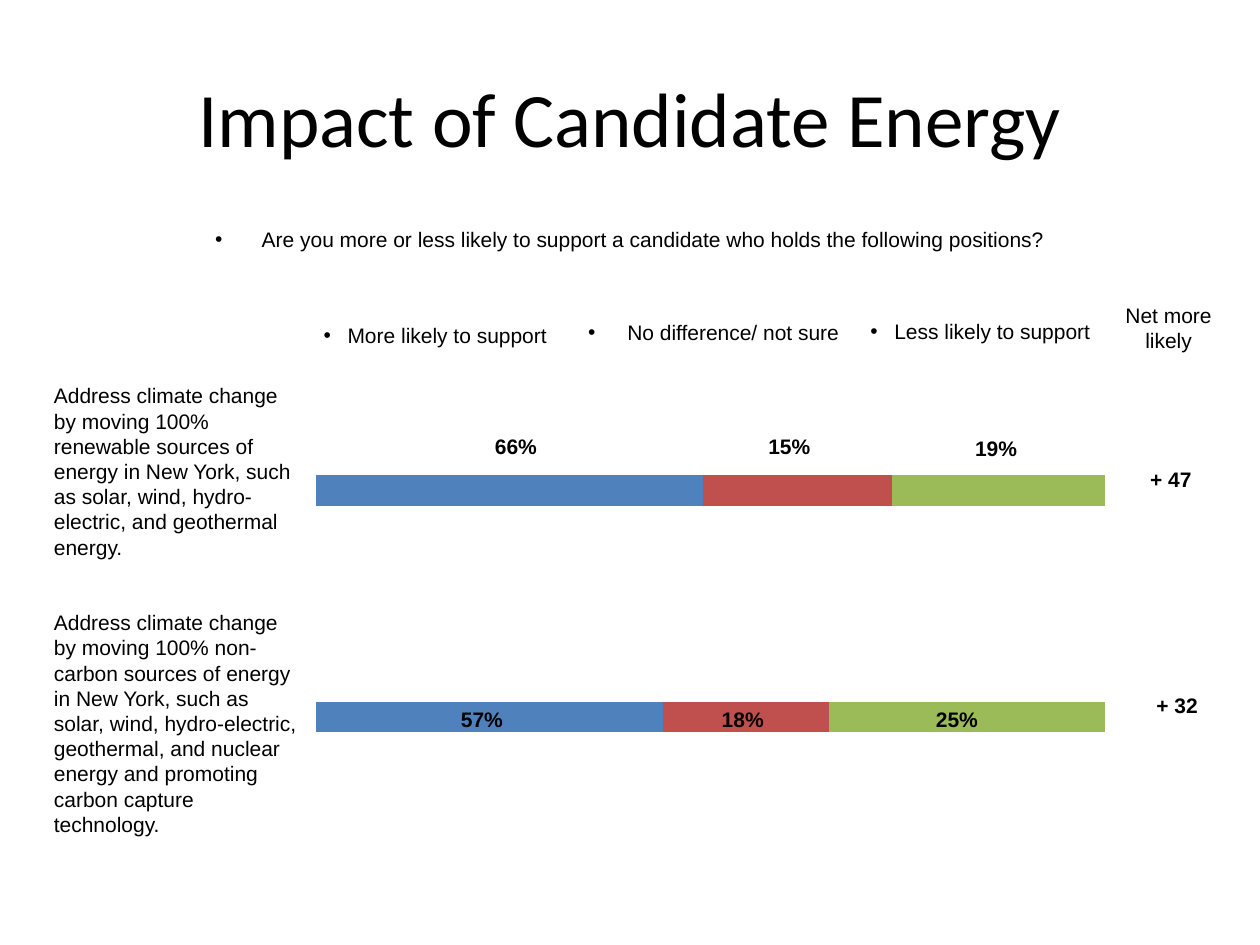
from lxml import etree
from pptx import Presentation
from pptx.chart.data import CategoryChartData
from pptx.dml.color import RGBColor
from pptx.enum.chart import XL_CHART_TYPE
from pptx.enum.text import MSO_ANCHOR, MSO_AUTO_SIZE, PP_ALIGN
from pptx.oxml import parse_xml
from pptx.oxml.ns import nsdecls, qn
from pptx.util import Inches, Pt

STACKED_BAR = XL_CHART_TYPE.BAR_STACKED_100
CENTER, LEFT = PP_ALIGN.CENTER, PP_ALIGN.LEFT
TOP, MIDDLE = MSO_ANCHOR.TOP, MSO_ANCHOR.MIDDLE
GROW, NO_FIT = MSO_AUTO_SIZE.SHAPE_TO_FIT_TEXT, MSO_AUTO_SIZE.NONE

WIDTH, HEIGHT = Inches(10), Inches(7.5)
COLUMN, ROW = WIDTH / 100, HEIGHT / 75
LINE = 3  # rows taken by a one-line label

# Per statement: wording, height, then (column, row offset, text) of each label
STATEMENTS = [
    (29.9, 15.1,
     "Address climate change by moving 100% renewable sources of energy in "
     "New York, such as solar, wind, hydro-electric, and geothermal energy.",
     [(38.3, 4, "66%"), (60, 4, "15%"), (76.4, 4.2, "19%"), (90.3, 6.6, "+ 47")]),
    (47.9, 19.2,
     "Address climate change by moving 100% non-carbon sources of energy in "
     "New York, such as solar, wind, hydro-electric, geothermal, and nuclear "
     "energy and promoting carbon capture technology.",
     [(35.6, 7.7, "57%"), (56.3, 7.7, "18%"), (73.3, 7.7, "25%"), (90.8, 6.6, "+ 32")]),
]
SERIES = [
    ("Series 1", (44, None, None, 49), "4F81BD"),
    ("Series 2", (21, None, None, 24), "C0504D"),
    ("Series 3", (35, None, None, 27), "9BBB59"),
]
PLOT_AREA = {"x": 0.021, "y": 0.232, "w": 0.939, "h": 0.694}


def color(hex_value):
    return RGBColor.from_string(hex_value)


def place(box):
    """Turn (column, row, columns, rows) into slide lengths."""
    left, top, width, height = box
    return [int(left * COLUMN), int(top * ROW), int(width * COLUMN), int(height * ROW)]


def move(shape, box):
    shape.left, shape.top, shape.width, shape.height = place(box)


def style(text_frame, size=12, name="Arial", bold=False, align=LEFT):
    for paragraph in text_frame.paragraphs:
        paragraph.alignment = align
        for run in paragraph.runs:
            run.font.size, run.font.name, run.font.bold = Pt(size), name, bold
            run.font.color.rgb = color("000000")


def add_bullet(paragraph, indent):
    properties = paragraph._p.get_or_add_pPr()
    properties.set("marL", str(Inches(indent)))
    properties.set("indent", str(-Inches(indent)))
    font = etree.SubElement(properties, qn("a:buFont"))
    font.set("typeface", "Arial")
    etree.SubElement(properties, qn("a:buChar")).set("char", "•")


def add_label(slide, box, text, wrap=False, indent=0, **formatting):
    text_frame = slide.shapes.add_textbox(*place(box)).text_frame
    text_frame.word_wrap = wrap
    text_frame.auto_size = GROW
    text_frame.text = text
    if indent:
        add_bullet(text_frame.paragraphs[0], indent)
    style(text_frame, **formatting)


def fill_title(slide, box):
    title = slide.shapes.title
    move(title, box)
    title.text_frame.text = "Impact of Candidate Energy"
    title.text_frame.vertical_anchor = MIDDLE
    style(title.text_frame, 44, "Calibri", align=CENTER)


def fill_question(slide, box):
    body = slide.placeholders[1]
    move(body, box)
    text_frame = body.text_frame
    text_frame.text = ("Are you more or less likely to support a candidate "
                       "who holds the following positions?")
    text_frame.vertical_anchor = TOP
    text_frame.auto_size = NO_FIT
    paragraph = text_frame.paragraphs[0]
    paragraph.space_before = Pt(0)
    add_bullet(paragraph, 0.37)
    style(text_frame, align=CENTER)


def add_headings(slide, left, top):
    add_label(slide, (left, top + 1.6, 20, LINE), "More likely to support",
              wrap=True, indent=0.19)
    add_label(slide, (left + 21, top + 1.4, 22.1, LINE), "No difference/ not sure",
              indent=0.31)
    add_label(slide, (left + 43.4, top + 1.3, 19.6, LINE), "Less likely to support",
              indent=0.19)
    add_label(slide, (left + 63.6, top, 8.9, 5), "Net more\nlikely", align=CENTER)


def add_support_chart(slide, box):
    data = CategoryChartData()
    data.categories = ["1", "2", "3", "4"]
    for name, values, _ in SERIES:
        data.add_series(name, values)
    chart = slide.shapes.add_chart(STACKED_BAR, *place(box), data).chart
    chart.has_legend = chart.has_title = False
    chart.font.size, chart.font.name = Pt(10), "Calibri"
    chart.font.color.rgb = color("000000")
    for axis in (chart.category_axis, chart.value_axis):
        axis.has_major_gridlines = False
        axis.visible = False
    plot = chart.plots[0]
    plot.gap_width, plot.overlap, plot.vary_by_categories = 150, 100, False
    for series, (_, _, hex_value) in zip(plot.series, SERIES):
        series.format.fill.solid()
        series.format.fill.fore_color.rgb = color(hex_value)
    set_plot_area(chart)


def set_plot_area(chart):
    """Fix the inner plot area as shares of the chart."""
    modes = '<c:xMode val="edge"/><c:yMode val="edge"/>'
    sizes = "".join(f'<c:{key} val="{share}"/>' for key, share in PLOT_AREA.items())
    layout = parse_xml(
        f'<c:layout {nsdecls("c")}><c:manualLayout><c:layoutTarget val="inner"/>'
        f"{modes}{sizes}</c:manualLayout></c:layout>")
    plot_area = chart._chartSpace.chart.plotArea
    for old_layout in plot_area.findall(qn("c:layout")):
        plot_area.remove(old_layout)
    plot_area.insert(0, layout)


def add_statement(slide, top, height, wording, labels):
    add_label(slide, (3.3, top, 21.7, height), wording, wrap=True)
    for left, offset, text in labels:
        add_label(slide, (left, top + offset, 5.4, LINE), text, bold=True)


def main():
    presentation = Presentation()
    presentation.slide_width, presentation.slide_height = WIDTH, HEIGHT
    slide = presentation.slides.add_slide(presentation.slide_layouts[1])
    fill_title(slide, (5, 3, 90, 12.5))
    fill_question(slide, (5, 17.5, 90, 3.3))
    add_headings(slide, 24.7, 23.5)
    add_support_chart(slide, (23.7, 27.9, 66.7, 34.6))
    for statement in STATEMENTS:
        add_statement(slide, *statement)
    presentation.save("out.pptx")


if __name__ == "__main__":
    main()
